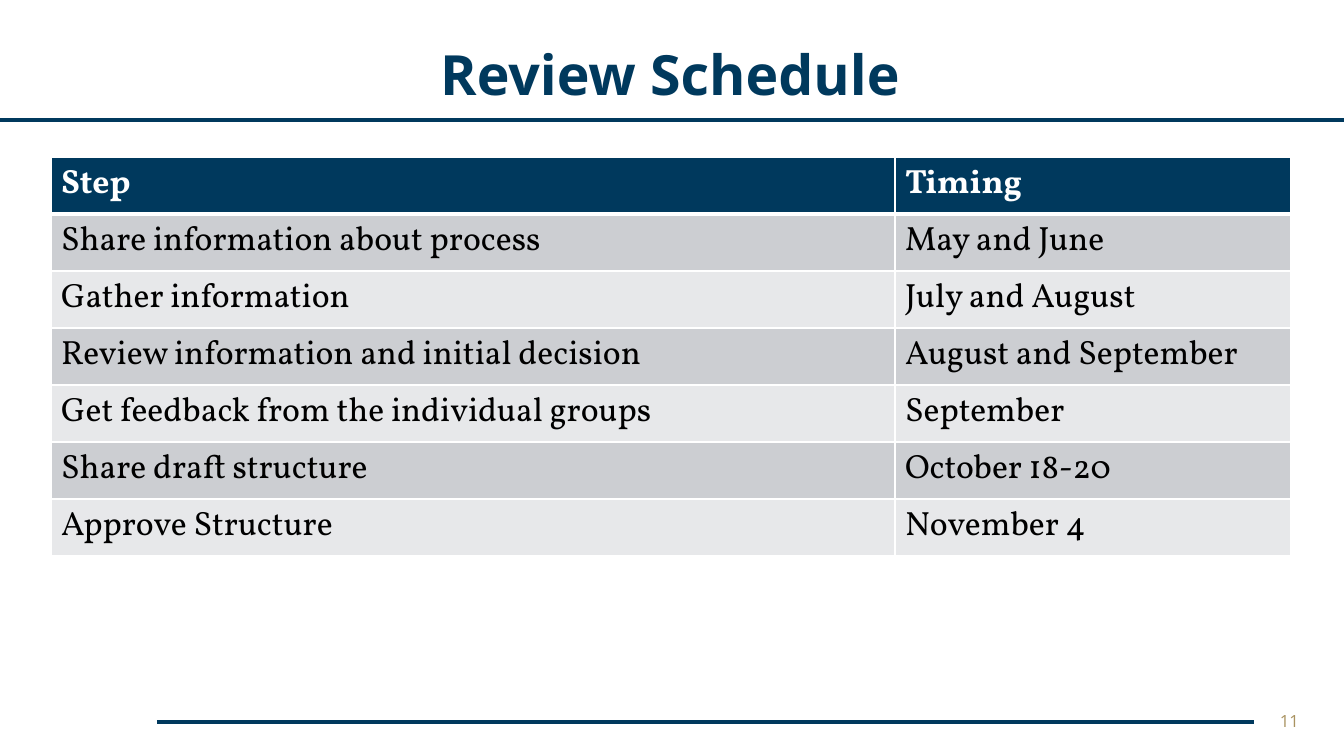
"""Build the Review Schedule slide."""
from lxml.etree import SubElement
from pptx import Presentation
from pptx.dml.color import RGBColor
from pptx.enum.shapes import MSO_CONNECTOR
from pptx.enum.text import MSO_ANCHOR, MSO_AUTO_SIZE, PP_ALIGN
from pptx.oxml.ns import qn
from pptx.util import Pt

HUES = {"navy": "00395D", "gold": "A99260", "white": "FFFFFF",
        "black": "000000", "dark": "CCCED2", "light": "E7E8EA"}
ROWS = [
    ("Step", "Timing"),
    ("Share information about process", "May and June"),
    ("Gather information", "July and August"),
    ("Review information and initial decision", "August and September"),
    ("Get feedback from the individual groups", "September"),
    ("Share draft structure", "October 18-20"),
    ("Approve Structure", "November 4"),
]


def px(*nums):
    return [round(num * 914400 / 100.8) for num in nums]


def style(para, face, size, hue, bold=False):
    for run in para.runs:
        run.font.name = face
        run.font.size = Pt(size)
        run.font.bold = bold
        run.font.color.rgb = RGBColor.from_string(HUES[hue])


deck = Presentation()
deck.slide_width, deck.slide_height = px(1344, 756)
slide = deck.slides.add_slide(deck.slide_layouts[5])

for left, right, y in [(0, 1344, 120), (157, 1254, 722)]:
    rule = slide.shapes.add_connector(MSO_CONNECTOR.STRAIGHT, *px(left, y, right, y))
    rule.line.color.rgb = RGBColor.from_string(HUES["navy"])
    rule.line.width = Pt(2.25)
    SubElement(rule._element.spPr, qn("a:effectLst"))

title = slide.shapes.title
title.left, title.top, title.width, title.height = px(50, 40, 1240, 76)
frame = title.text_frame
frame.text = "Review Schedule"
frame.auto_size = MSO_AUTO_SIZE.NONE
frame.vertical_anchor = MSO_ANCHOR.MIDDLE
para = frame.paragraphs[0]
para.alignment = PP_ALIGN.CENTER
para.line_spacing = 0.9
style(para, "Open Sans", 39.6, "navy", True)

table = slide.shapes.add_table(len(ROWS), 2, *px(51, 157, 1240, 399)).table
table.columns[0].width, table.columns[1].width = px(844, 396)
for i, texts in enumerate(ROWS):
    head = i == 0
    fill = "navy" if head else "dark" if i % 2 else "light"
    for j, text in enumerate(texts):
        cell = table.cell(i, j)
        cell.text = text
        style(cell.text_frame.paragraphs[0], "Vollkorn", 24,
              "white" if head else "black", head)
        props = cell._tc.get_or_add_tcPr()
        for side in ("lnL", "lnR", "lnT", "lnB"):
            thick = (side == "lnB" and head) or (side == "lnT" and i == 1)
            edge = SubElement(props, qn(f"a:{side}"), w=str(Pt(3 if thick else 1)))
            paint = SubElement(edge, qn("a:solidFill"))
            SubElement(paint, qn("a:srgbClr"), val=HUES["white"])
        cell.fill.solid()
        cell.fill.fore_color.rgb = RGBColor.from_string(HUES[fill])

frame = slide.shapes.add_textbox(*px(991, 701, 318, 40)).text_frame
frame.word_wrap = True
frame.vertical_anchor = MSO_ANCHOR.MIDDLE
frame.text = "11"
para = frame.paragraphs[0]
para.alignment = PP_ALIGN.RIGHT
style(para, "Open Sans", 12, "gold")

deck.save("out.pptx")
